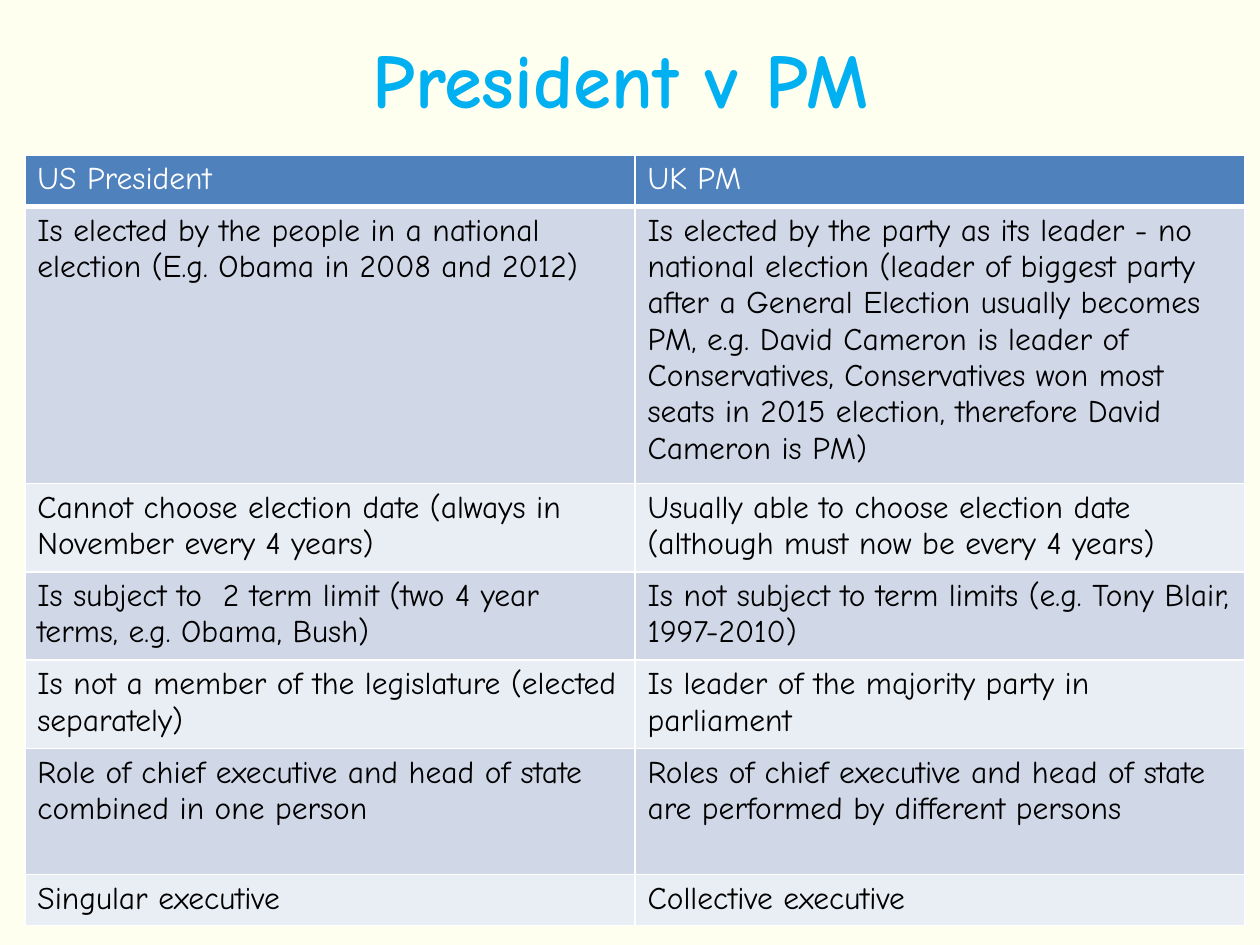
"""Build a slide that compares the US President with the UK Prime Minister."""
from lxml import etree
from pptx import Presentation
from pptx import util as u
from pptx.dml.color import RGBColor
from pptx.enum import text
from pptx.oxml import ns

CREAM = RGBColor(0xFF, 0xFF, 0xF0)
SKY = RGBColor(0x00, 0xB0, 0xF0)
BLUE = RGBColor(0x4F, 0x81, 0xBD)
MIST = RGBColor(0xD0, 0xD8, 0xE8)
PALE = RGBColor(0xE9, 0xED, 0xF4)
WHITE = RGBColor(0xFF, 0xFF, 0xFF)
BLACK = RGBColor(0x00, 0x00, 0x00)

ROWS = [
    (1.03, "US President", "UK PM"),
    (5.38, "Is elected by the people in a national election (E.g. Obama in 2008 and 2012)",
     "Is elected by the party as its leader - no national election (leader of biggest party "
     "after a General Election usually becomes PM, e.g. David Cameron is leader of "
     "Conservatives, Conservatives won most seats in 2015 election, therefore David "
     "Cameron is PM)"),
    (1.73, "Cannot choose election date (always in November every 4 years)",
     "Usually able to choose election date (although must now be every 4 years)"),
    (1.73, "Is subject to  2 term limit (two 4 year terms, e.g. Obama, Bush)",
     "Is not subject to term limits (e.g. Tony Blair, 1997-2010)"),
    (1.78, "Is not a member of the legislature (elected separately)",
     "Is leader of the majority party in parliament"),
    (2.54, "Role of chief executive and head of state combined in one person",
     "Roles of chief executive and head of state are performed by different persons"),
    (1.03, "Singular executive", "Collective executive"),
]


class Deck:
    """Hold the style and the current slide."""

    face = "Comic Neue"
    head = {"size": u.Pt(44), "bold": True}
    body = {"size": u.Pt(18), "bold": False}

    def __init__(self):
        self.prs = Presentation()
        self.prs.slide_width, self.prs.slide_height = u.Cm(25.4), u.Cm(19.05)
        self.slide = self.prs.slides.add_slide(self.prs.slide_layouts[6])
        fill = self.slide.background.fill
        fill.solid()
        fill.fore_color.rgb = CREAM

    def label(self, frame, words, style, ink):
        run = frame.paragraphs[0].add_run()
        run.text = words
        for key, val in {"name": self.face, **style}.items():
            setattr(run.font, key, val)
        run.font.color.rgb = ink

    def title(self, words, *box):
        frame = self.slide.shapes.add_textbox(*map(u.Cm, box)).text_frame
        form = {"word_wrap": True, "vertical_anchor": text.MSO_ANCHOR.MIDDLE}
        for key, val in form.items():
            setattr(frame, key, val)
        frame.paragraphs[0].alignment = text.PP_ALIGN.CENTER
        self.label(frame, words, self.head, SKY)

    def edge(self, cell, base):
        props = cell._tc.get_or_add_tcPr()
        for side, width in {"L": 1, "R": 1, "T": 1, "B": base}.items():
            line = etree.SubElement(props, ns.qn(f"a:ln{side}"), w=str(u.Pt(width)))
            fill = etree.SubElement(line, ns.qn("a:solidFill"))
            etree.SubElement(fill, ns.qn("a:srgbClr"), val=str(WHITE))

    def table(self, rows, left, top, width):
        high = sum(row[0] for row in rows)
        grid = self.slide.shapes.add_table(
            len(rows), 2, *map(u.Cm, (left, top, width, high))).table
        for num, (tall, *pair) in enumerate(rows):
            grid.rows[num].height = u.Cm(tall)
            tint = (PALE, MIST)[num % 2] if num else BLUE
            for col, words in enumerate(pair):
                cell = grid.cell(num, col)
                self.edge(cell, 1 if num else 3)
                cell.fill.solid()
                cell.fill.fore_color.rgb = tint
                self.label(cell.text_frame, words, self.body, BLACK if num else WHITE)


def main():
    deck = Deck()
    deck.title("President v PM", 1.09, -0.03, 22.86, 3.18)
    deck.table(ROWS, 0.5, 3.13, 24.6)
    deck.prs.save("out.pptx")


if __name__ == "__main__":
    main()
